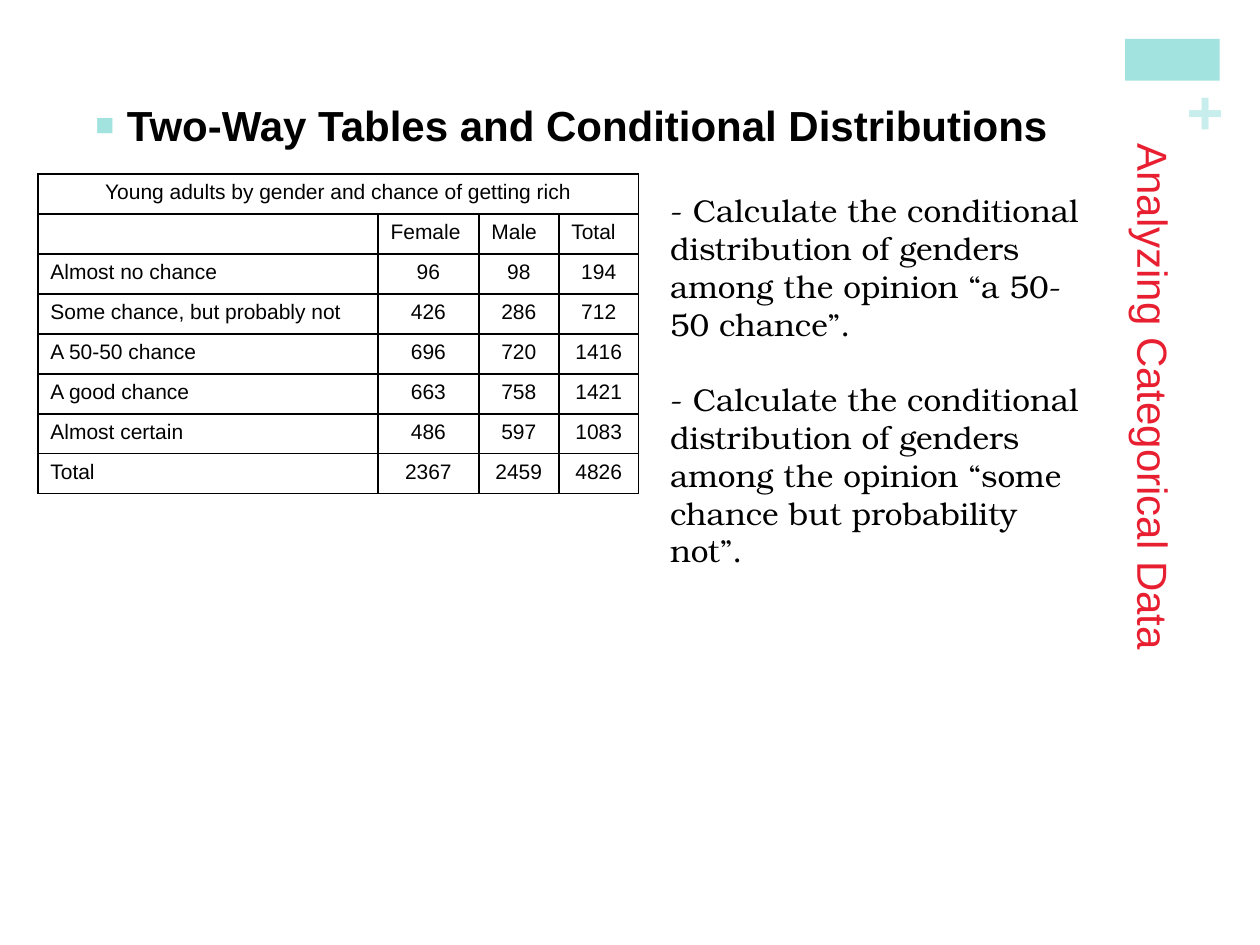
from dataclasses import dataclass
from typing import Optional

from lxml.etree import SubElement
from pptx import Presentation
from pptx.dml.color import RGBColor
from pptx.enum.shapes import MSO_SHAPE as Preset
from pptx.enum.text import MSO_ANCHOR as Anchor, PP_ALIGN as Align
from pptx.oxml.ns import qn
from pptx.util import Inches, Pt


@dataclass(frozen=True)
class Theme:
    accent: str = "A2E3DF"
    accent_light: str = "C7EEEC"
    title: str = "E81F30"
    ink: str = "000000"
    sans: str = "Arial"
    serif: str = "TeX Gyre Bonum"
    plus_size: float = 36
    heading_size: float = 24
    task_size: float = 18
    table_size: float = 12
    border_width: float = 1


THEME = Theme()


@dataclass(frozen=True)
class TextBlock:
    """Text with its box in inches and its look."""
    paragraphs: tuple[str, ...]
    left: float
    top: float
    width: float
    height: float
    size: float
    color: str = THEME.ink
    font: str = THEME.sans
    bold: bool = False
    rotation: float = 0
    inset: Optional[float] = None
    anchor: Anchor = Anchor.TOP
    vertical: bool = False
    gap: float = 0


def style_runs(paragraph, size: float, color: str, font: str = THEME.sans, bold: bool = False) -> None:
    for run in paragraph.runs:
        run.font.size = Pt(size)
        run.font.name = font
        run.font.bold = bold
        run.font.color.rgb = RGBColor.from_string(color)


def add_text(slide, block: TextBlock):
    box = slide.shapes.add_textbox(
        Inches(block.left), Inches(block.top), Inches(block.width), Inches(block.height))
    box.rotation = block.rotation
    frame = box.text_frame
    frame.word_wrap = True
    frame.vertical_anchor = block.anchor
    if block.inset is not None:
        frame.margin_left = frame.margin_right = Inches(block.inset)
        frame.margin_top = frame.margin_bottom = Inches(block.inset)
    if block.vertical:
        frame._txBody.bodyPr.set("vert", "eaVert")
    frame.text = "\n".join(block.paragraphs)
    for index, paragraph in enumerate(frame.paragraphs):
        paragraph.space_before = Pt(block.gap if index else 0)
        style_runs(paragraph, block.size, block.color, block.font, block.bold)
    return box


def add_square_bullet(paragraph, color: str, indent: float) -> None:
    props = paragraph._p.get_or_add_pPr()
    props.set("marL", str(Inches(indent)))
    props.set("indent", str(-Inches(indent)))
    bullet_color = SubElement(props, qn("a:buClr"))
    SubElement(bullet_color, qn("a:srgbClr"), val=color)
    SubElement(props, qn("a:buSzPct"), val="75000")
    SubElement(props, qn("a:buFont"), typeface=THEME.sans)
    SubElement(props, qn("a:buChar"), char="■")


def outline_cell(cell) -> None:
    props = cell._tc.get_or_add_tcPr()
    for side in ("lnL", "lnR", "lnT", "lnB"):
        line = SubElement(props, qn(f"a:{side}"), w=str(Pt(THEME.border_width)))
        fill = SubElement(line, qn("a:solidFill"))
        SubElement(fill, qn("a:srgbClr"), val=THEME.ink)


# Counts of young adults by opinion and gender
CAPTION = "Young adults by gender and chance of getting rich"
COLUMN_WIDTHS = (2.7, 0.8, 0.635, 0.635)
ROW_HEIGHT = 0.3175
OPINIONS = (
    ("", "Female", "Male", "Total"),
    ("Almost no chance", 96, 98, 194),
    ("Some chance, but probably not", 426, 286, 712),
    ("A 50-50 chance", 696, 720, 1416),
    ("A good chance", 663, 758, 1421),
    ("Almost certain", 486, 597, 1083),
    ("Total", 2367, 2459, 4826),
)


def add_opinion_table(slide, left: float, top: float) -> None:
    rows = ((CAPTION, "", "", ""),) + OPINIONS
    table = slide.shapes.add_table(
        len(rows), len(COLUMN_WIDTHS), Inches(left), Inches(top),
        Inches(sum(COLUMN_WIDTHS)), Inches(ROW_HEIGHT * len(rows))).table
    table.first_row = table.horz_banding = False
    for column, width in zip(table.columns, COLUMN_WIDTHS):
        column.width = Inches(width)
    for r, values in enumerate(rows):
        table.rows[r].height = Inches(ROW_HEIGHT)
        for c, value in enumerate(values):
            cell = table.cell(r, c)
            cell.text = str(value)
            paragraph = cell.text_frame.paragraphs[0]
            paragraph.font.size = Pt(THEME.table_size)
            centered = value == CAPTION or isinstance(value, int)
            paragraph.alignment = Align.CENTER if centered else Align.LEFT
            style_runs(paragraph, THEME.table_size, THEME.ink)
            outline_cell(cell)
            cell.fill.background()
    table.cell(0, 0).merge(table.cell(0, len(COLUMN_WIDTHS) - 1))


PLUS = TextBlock(("+",), 9.4, 0.61, 0.28, 0.61, THEME.plus_size, THEME.accent_light,
                 bold=True, rotation=270, inset=0)
TITLE = TextBlock(("Analyzing Categorical Data",), 8.79, 1.04, 0.74, 5.66,
                  THEME.heading_size, THEME.title, anchor=Anchor.MIDDLE, vertical=True)
HEADING = TextBlock(("Two-Way Tables and Conditional Distributions",), 0.66, 0.74, 8.07, 0.5,
                    THEME.heading_size, bold=True)
TASKS = TextBlock(
    ("- Calculate the conditional distribution of genders among the opinion “a 50-50 chance”.",
     "- Calculate the conditional distribution of genders among the opinion "
     "“some chance but probability not”."),
    5.22, 1.47, 3.53, 3.43, THEME.task_size, font=THEME.serif, gap=21.5)


def main() -> None:
    deck = Presentation()
    deck.slide_width, deck.slide_height = Inches(10), Inches(7.5)
    slide = deck.slides.add_slide(deck.slide_layouts[6])

    # Corner decoration
    corner = slide.shapes.add_shape(
        Preset.RECTANGLE, Inches(8.93), Inches(0.31), Inches(0.75), Inches(0.33))
    corner.shadow.inherit = False
    corner.fill.solid()
    corner.fill.fore_color.rgb = RGBColor.from_string(THEME.accent)
    corner.line.fill.background()
    add_text(slide, PLUS)

    # Two-way table
    add_opinion_table(slide, 0.3, 1.38)

    # Side title, heading and tasks
    add_text(slide, TITLE)
    heading = add_text(slide, HEADING)
    add_square_bullet(heading.text_frame.paragraphs[0], THEME.accent, indent=0.25)
    add_text(slide, TASKS)

    deck.save("out.pptx")


if __name__ == "__main__":
    main()
